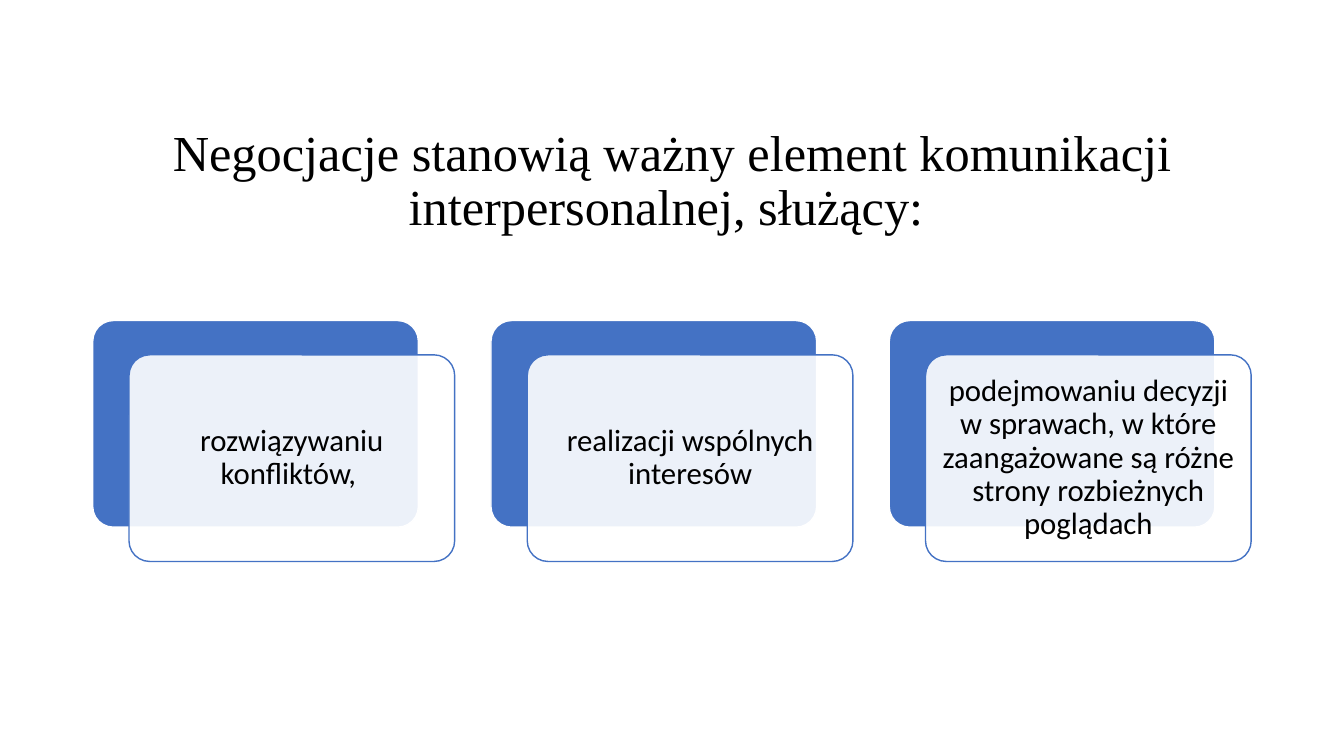
from pptx import Presentation
from pptx.dml.color import RGBColor
from pptx.enum.shapes import MSO_SHAPE as Shape
from pptx.enum.text import MSO_ANCHOR as Anchor, PP_ALIGN as Align
from pptx.oxml.ns import qn
from pptx.util import Emu, Pt
from lxml.etree import SubElement

PX = 9144
COLORS = {"accent": "4472C4", "white": "FFFFFF", "text": "000000"}
TITLE = "Negocjacje stanowią ważny element komunikacji interpersonalnej, służący: "
PURPOSES = [
    "rozwiązywaniu konfliktów, ",
    "realizacji wspólnych interesów",
    "podejmowaniu decyzji w sprawach, w które zaangażowane są różne strony rozbieżnych poglądach",
]
LEFT, TOP, WIDTH, HEIGHT = 92, 318, 323, 205
STEP, SHIFT_X, SHIFT_Y, INSET = 395, 36, 34, 9


def write_text(shape, text, font_format):
    frame = shape.text_frame
    frame.word_wrap = True
    frame.vertical_anchor = Anchor.MIDDLE
    paragraph = frame.paragraphs[0]
    paragraph.alignment = Align.CENTER
    paragraph.line_spacing = 0.9
    run = paragraph.add_run()
    run.text = text
    for name, value in font_format.items():
        setattr(run.font, name, value)
    run.font.color.rgb = RGBColor.from_string(COLORS["text"])


def add_panel(left, top, fill, line):
    box = [Emu(value * PX) for value in (left, top, WIDTH, HEIGHT)]
    panel = slide.shapes.add_shape(Shape.ROUNDED_RECTANGLE, *box)
    panel.adjustments[0] = 0.1
    panel.shadow.inherit = False
    panel.fill.solid()
    panel.fill.fore_color.rgb = RGBColor.from_string(COLORS[fill])
    panel.line.color.rgb = RGBColor.from_string(COLORS[line])
    panel.line.width = Pt(1)
    return panel


presentation = Presentation()
presentation.slide_width = Emu(1333 * PX)
presentation.slide_height = Emu(750 * PX)
slide = presentation.slides.add_slide(presentation.slide_layouts[6])

title = slide.shapes.add_textbox(*[Emu(value * PX) for value in (92, 119, 1150, 124)])
write_text(title, TITLE, {"name": "Times New Roman", "size": Pt(36)})

for index, purpose in enumerate(PURPOSES):
    left = LEFT + index * STEP
    add_panel(left, TOP, "accent", "white")
    card = add_panel(left + SHIFT_X, TOP + SHIFT_Y, "white", "accent")
    fill_color = card.fill._xPr.find(qn("a:solidFill")).find(qn("a:srgbClr"))
    SubElement(fill_color, qn("a:alpha"), val="90000")
    for side in ("left", "top", "right", "bottom"):
        setattr(card.text_frame, f"margin_{side}", Emu(INSET * PX))
    write_text(card, purpose, {"name": "Calibri", "size": Pt(22)})

presentation.save("out.pptx")
